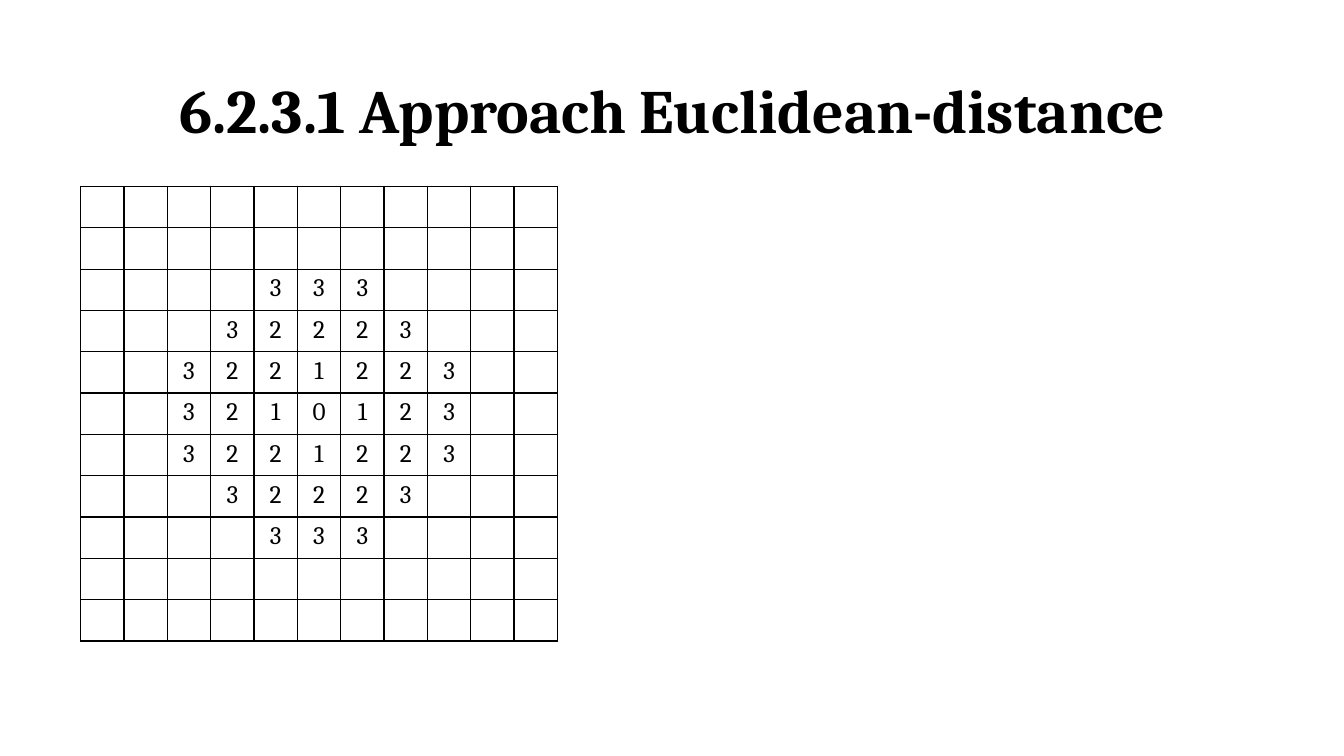
from lxml import etree
from pptx import Presentation, util as u
from pptx.dml.color import RGBColor
from pptx.enum import text
from pptx.oxml import ns

BLACK = RGBColor(0x00, 0x00, 0x00)
WHITE = RGBColor(0xFF, 0xFF, 0xFF)
FONT = "Cambria"
SLIDE_WIDTH, SLIDE_HEIGHT = u.Inches(13.33), u.Inches(7.5)
COLUMN, ROW = u.Inches(0.43), u.Inches(0.41)
BORDER = u.Pt(1)

DISTANCES = [
    "...........",
    "...........",
    "....333....",
    "...32223...",
    "..3221223..",
    "..3210123..",
    "..3221223..",
    "...32223...",
    "....333....",
    "...........",
    "...........",
]


def write_text(frame, content, size=18, bold=False, line_spacing=None):
    paragraph = frame.paragraphs[0]
    paragraph.alignment = text.PP_ALIGN.CENTER
    paragraph.line_spacing = line_spacing
    run = paragraph.add_run()
    run.text = content
    run.font.name = FONT
    run.font.size = u.Pt(size)
    run.font.bold = bold
    run.font.color.rgb = BLACK


def add_title(slide, content):
    box = slide.shapes.add_textbox(
        round(SLIDE_WIDTH * 0.069), round(SLIDE_HEIGHT * 0.053),
        round(SLIDE_WIDTH * 0.863), round(SLIDE_HEIGHT * 0.193))
    frame = box.text_frame
    frame.word_wrap = True
    frame.vertical_anchor = text.MSO_ANCHOR.MIDDLE
    write_text(frame, content, size=44, bold=True, line_spacing=0.9)


def add_borders(cell):
    properties = cell._tc.get_or_add_tcPr()
    for position, side in enumerate(("lnL", "lnR", "lnT", "lnB")):
        line = etree.Element(ns.qn(f"a:{side}"), w=str(BORDER))
        fill = etree.SubElement(line, ns.qn("a:solidFill"))
        etree.SubElement(fill, ns.qn("a:srgbClr"), val=str(BLACK))
        properties.insert(position, line)


def add_distance_table(slide, rows):
    row_count, column_count = len(rows), len(rows[0])
    table = slide.shapes.add_table(
        row_count, column_count,
        round(SLIDE_WIDTH * 0.06), round(SLIDE_HEIGHT * 0.2467),
        COLUMN * column_count, ROW * row_count).table
    table.first_row = False
    table.horz_banding = False
    for column in table.columns:
        column.width = COLUMN
    for row, distances in zip(table.rows, rows):
        row.height = ROW
        for cell, distance in zip(row.cells, distances):
            cell.fill.solid()
            cell.fill.fore_color.rgb = WHITE
            add_borders(cell)
            if distance != ".":
                write_text(cell.text_frame, distance)


def main():
    presentation = Presentation()
    presentation.slide_width = SLIDE_WIDTH
    presentation.slide_height = SLIDE_HEIGHT
    slide = presentation.slides.add_slide(presentation.slide_layouts[6])
    add_title(slide, "6.2.3.1 Approach Euclidean-distance")
    add_distance_table(slide, DISTANCES)
    presentation.save("out.pptx")


if __name__ == "__main__":
    main()
